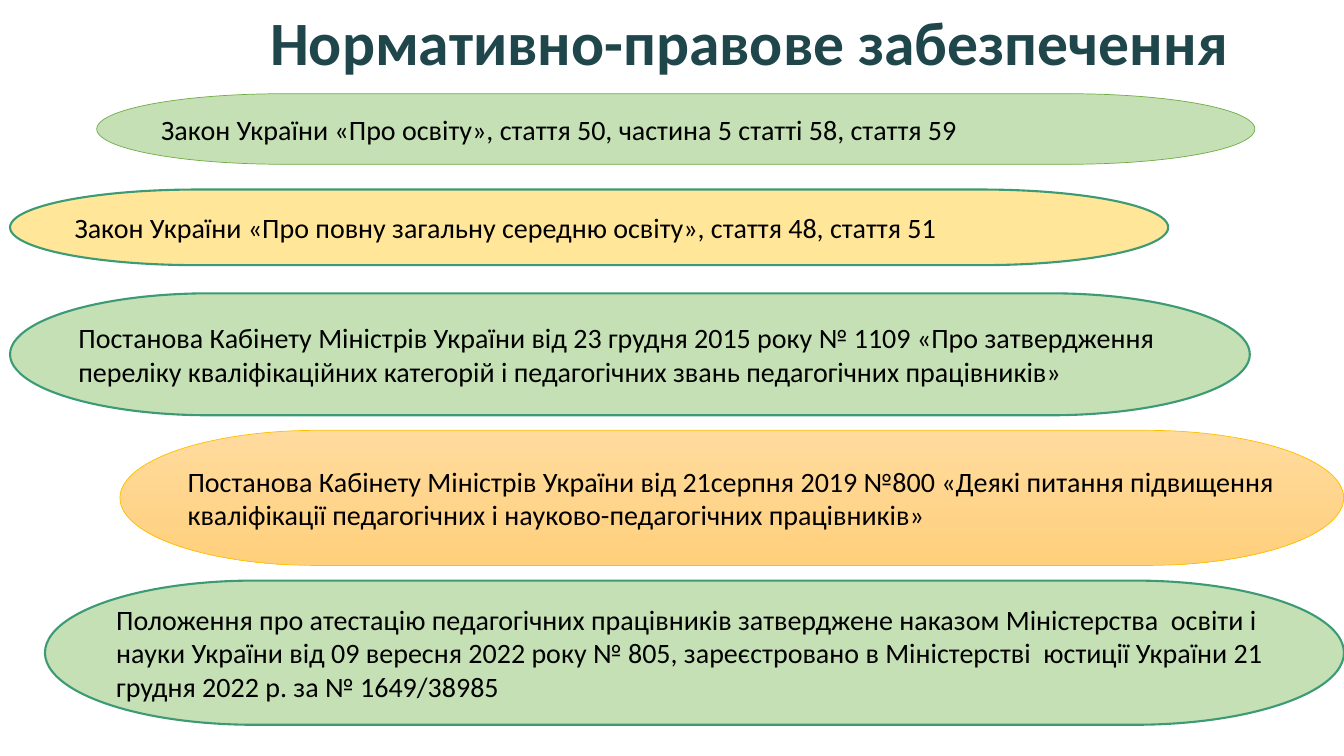
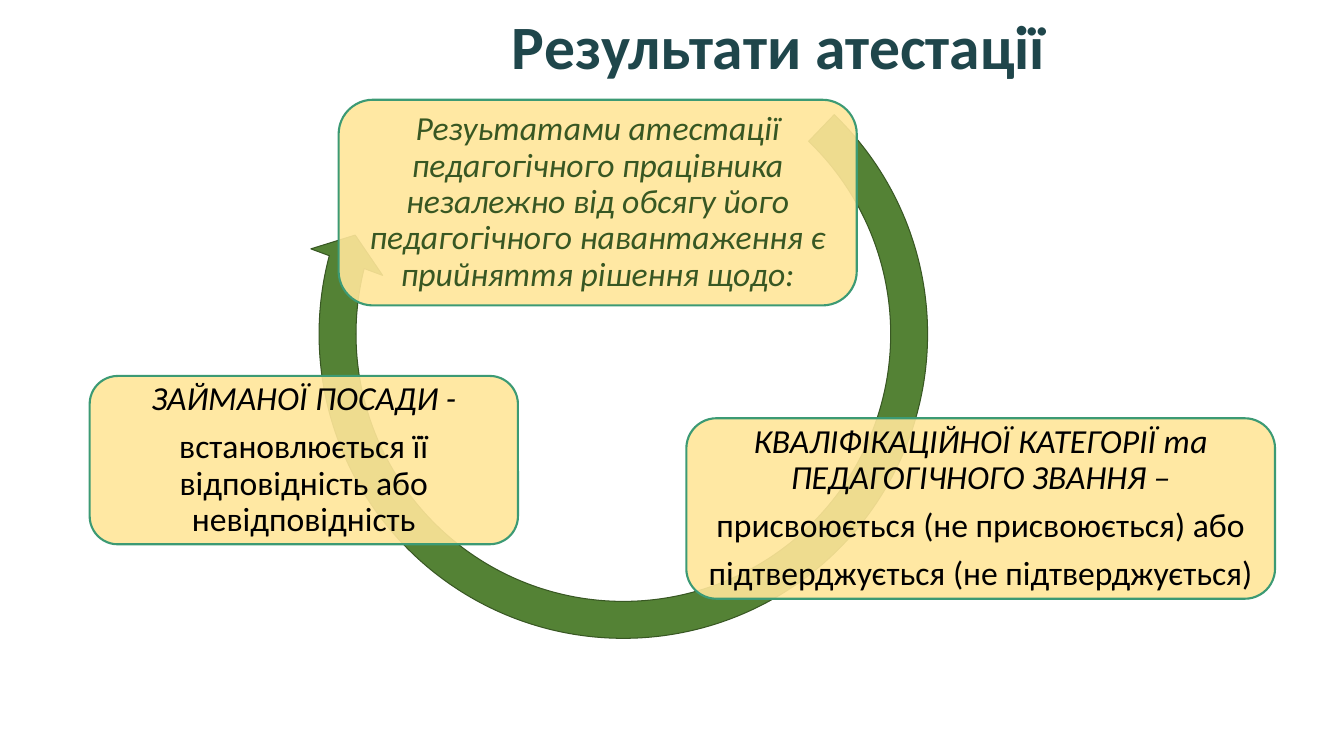
from dataclasses import dataclass

from lxml.etree import SubElement
from pptx import Presentation
from pptx.dml.color import RGBColor
from pptx.enum.shapes import MSO_SHAPE
from pptx.enum.text import MSO_ANCHOR, MSO_AUTO_SIZE, PP_ALIGN
from pptx.oxml.ns import qn
from pptx.shapes.autoshape import Shape
from pptx.slide import Slide
from pptx.util import Inches, Pt

SLIDE_WIDTH, SLIDE_HEIGHT = Inches(40 / 3), Inches(7.5)
TITLE_ONLY = 5
FONT = "Calibri"
BLACK, TITLE_TEAL, EDGE_TEAL = "000000", "1F464B", "3C9A74"
PALE_GREEN, LEAF_GREEN = "C5E0B4", "70AD47"
ARROW_GREEN, DARK_GREEN = "548235", "385723"
PALE_YELLOW, GOLD = "FFE699", "FFC000"
ORANGE_TOP, ORANGE_BOTTOM = "FFDB9E", "FFD07C"


@dataclass(frozen=True)
class Box:
    """A place on the slide, in percent of its width and height."""
    left: float
    top: float
    width: float
    height: float

    def emu(self) -> tuple[int, int, int, int]:
        return (int(SLIDE_WIDTH * self.left / 100), int(SLIDE_HEIGHT * self.top / 100),
                int(SLIDE_WIDTH * self.width / 100), int(SLIDE_HEIGHT * self.height / 100))


@dataclass(frozen=True)
class LegalAct:
    box: Box
    text: str
    fills: tuple[str, ...] = (PALE_GREEN,)
    edge: str = EDGE_TEAL
    edge_width: float = 1.5


@dataclass(frozen=True)
class ResultCard:
    box: Box
    heading: str
    details: tuple[str, ...] = ()
    color: str = BLACK


LEGAL_ACTS = (
    LegalAct(Box(7.2, 12.4, 86.17, 9.33),
             "Закон України «Про освіту», стаття 50, частина 5 статті 58, стаття 59",
             edge=LEAF_GREEN, edge_width=0.5),
    LegalAct(Box(0.75, 25.07, 86.17, 10),
             "Закон України «Про повну загальну середню освіту», стаття 48, стаття 51",
             fills=(PALE_YELLOW,)),
    LegalAct(Box(0.75, 38.8, 92.25, 16.13),
             "Постанова Кабінету Міністрів України від 23 грудня 2015 року № 1109 "
             "«Про затвердження переліку кваліфікаційних категорій і педагогічних звань "
             "педагогічних працівників»"),
    LegalAct(Box(8.93, 56.93, 91.05, 17.87),
             "Постанова Кабінету Міністрів України від 21серпня 2019 №800 «Деякі питання "
             "підвищення кваліфікації педагогічних і науково-педагогічних працівників»",
             fills=(ORANGE_TOP, ORANGE_BOTTOM), edge=GOLD, edge_width=0.5),
    LegalAct(Box(3.35, 76.8, 96.65, 19.07),
             "Положення про атестацію педагогічних працівників затверджене наказом "
             "Міністерства  освіти і науки України від 09 вересня 2022 року № 805, "
             "зареєстровано в Міністерстві  юстиції України 21 грудня 2022 р. "
             "за № 1649/38985"),
)

CYCLE_BOX = Box(22.27, 1.33, 48.22, 85.73)
CYCLE_ADJUSTMENTS = (0.057, 3.405, 116.749, 188.323, 0.059)

RESULT_CARDS = (
    ResultCard(Box(25.2, 13.2, 38.55, 27.2),
               "Резуьтатами атестації педагогічного працівника незалежно від обсягу його "
               "педагогічного навантаження є прийняття рішення щодо:", color=DARK_GREEN),
    ResultCard(Box(51.07, 55.33, 43.8, 23.87),
               "КВАЛІФІКАЦІЙНОЇ КАТЕГОРІЇ та ПЕДАГОГІЧНОГО ЗВАННЯ –",
               ("присвоюється (не присвоюється) або", "підтверджується (не підтверджується)")),
    ResultCard(Box(6.67, 49.73, 31.87, 22.27), "ЗАЙМАНОЇ ПОСАДИ -",
               ("встановлюється її відповідність або невідповідність",)),
)


def rgb(color: str) -> RGBColor:
    return RGBColor.from_string(color)


def format_paragraph(paragraph, size: float, color: str, align: PP_ALIGN,
                     bold: bool = False, italic: bool = False) -> None:
    paragraph.alignment = align
    for run in paragraph.runs:
        run.font.name, run.font.size = FONT, Pt(size)
        run.font.bold, run.font.italic = bold, italic
        run.font.color.rgb = rgb(color)


def add_titled_slide(deck: Presentation, title: str, box: Box, align: PP_ALIGN) -> Slide:
    slide = deck.slides.add_slide(deck.slide_layouts[TITLE_ONLY])
    heading = slide.shapes.title
    heading.left, heading.top, heading.width, heading.height = box.emu()
    frame = heading.text_frame
    frame.text = title
    frame.auto_size = MSO_AUTO_SIZE.NONE
    frame.vertical_anchor = MSO_ANCHOR.MIDDLE
    frame.paragraphs[0].line_spacing = 0.9
    format_paragraph(frame.paragraphs[0], 44, TITLE_TEAL, align, bold=True)
    return slide


def add_outlined(slide: Slide, kind: MSO_SHAPE, box: Box, fills: tuple[str, ...],
                 edge: str, edge_width: float) -> Shape:
    """Two fill colours make a gradient from top to bottom."""
    shape = slide.shapes.add_shape(kind, *box.emu())
    shape.shadow.inherit = False
    if len(fills) == 1:
        shape.fill.solid()
        shape.fill.fore_color.rgb = rgb(fills[0])
    else:
        shape.fill.gradient()
        shape.fill.gradient_angle = 270
        for stop, color in zip(shape.fill.gradient_stops, fills):
            stop.color.rgb = rgb(color)
    shape.line.color.rgb = rgb(edge)
    shape.line.width = Pt(edge_width)
    shape.text_frame.word_wrap = True
    shape.text_frame.vertical_anchor = MSO_ANCHOR.MIDDLE
    return shape


def set_opacity(shape: Shape, percent: int) -> None:
    fill_color = shape.element.spPr.find(qn("a:solidFill"))[0]
    SubElement(fill_color, qn("a:alpha")).set("val", str(percent * 1000))


def add_legal_act(slide: Slide, act: LegalAct) -> None:
    pill = add_outlined(slide, MSO_SHAPE.FLOWCHART_TERMINATOR, act.box, act.fills,
                        act.edge, act.edge_width)
    pill.text_frame.text = act.text
    format_paragraph(pill.text_frame.paragraphs[0], 20, BLACK, PP_ALIGN.LEFT)


def add_result_card(slide: Slide, card: ResultCard) -> None:
    panel = add_outlined(slide, MSO_SHAPE.ROUNDED_RECTANGLE, card.box, (PALE_YELLOW,),
                         EDGE_TEAL, 1.5)
    set_opacity(panel, 90)
    frame = panel.text_frame
    frame.margin_left = frame.margin_right = Inches(0.08)
    frame.margin_top = frame.margin_bottom = Inches(0.1)
    frame.text = "\n".join((card.heading, *card.details))
    for index, paragraph in enumerate(frame.paragraphs):
        paragraph.line_spacing = 0.9
        paragraph.space_after = Pt(8.4)
        format_paragraph(paragraph, 24, card.color, PP_ALIGN.CENTER, italic=index == 0)


def add_cycle_arrow(slide: Slide) -> None:
    arrow = add_outlined(slide, MSO_SHAPE.CIRCULAR_ARROW, CYCLE_BOX, (ARROW_GREEN,),
                         DARK_GREEN, 0.75)
    for index, value in enumerate(CYCLE_ADJUSTMENTS):
        arrow.adjustments[index] = value


def main() -> None:
    deck = Presentation()
    deck.slide_width, deck.slide_height = SLIDE_WIDTH, SLIDE_HEIGHT

    legal_basis = add_titled_slide(deck, "Нормативно-правове забезпечення",
                                   Box(19.35, 0.4, 75, 11.33), PP_ALIGN.LEFT)
    for act in LEGAL_ACTS:
        add_legal_act(legal_basis, act)

    results = add_titled_slide(deck, "Результати атестації",
                               Box(15.9, 0, 84.1, 13.2), PP_ALIGN.CENTER)
    add_cycle_arrow(results)
    for card in RESULT_CARDS:
        add_result_card(results, card)

    deck.save("out.pptx")


if __name__ == "__main__":
    main()
